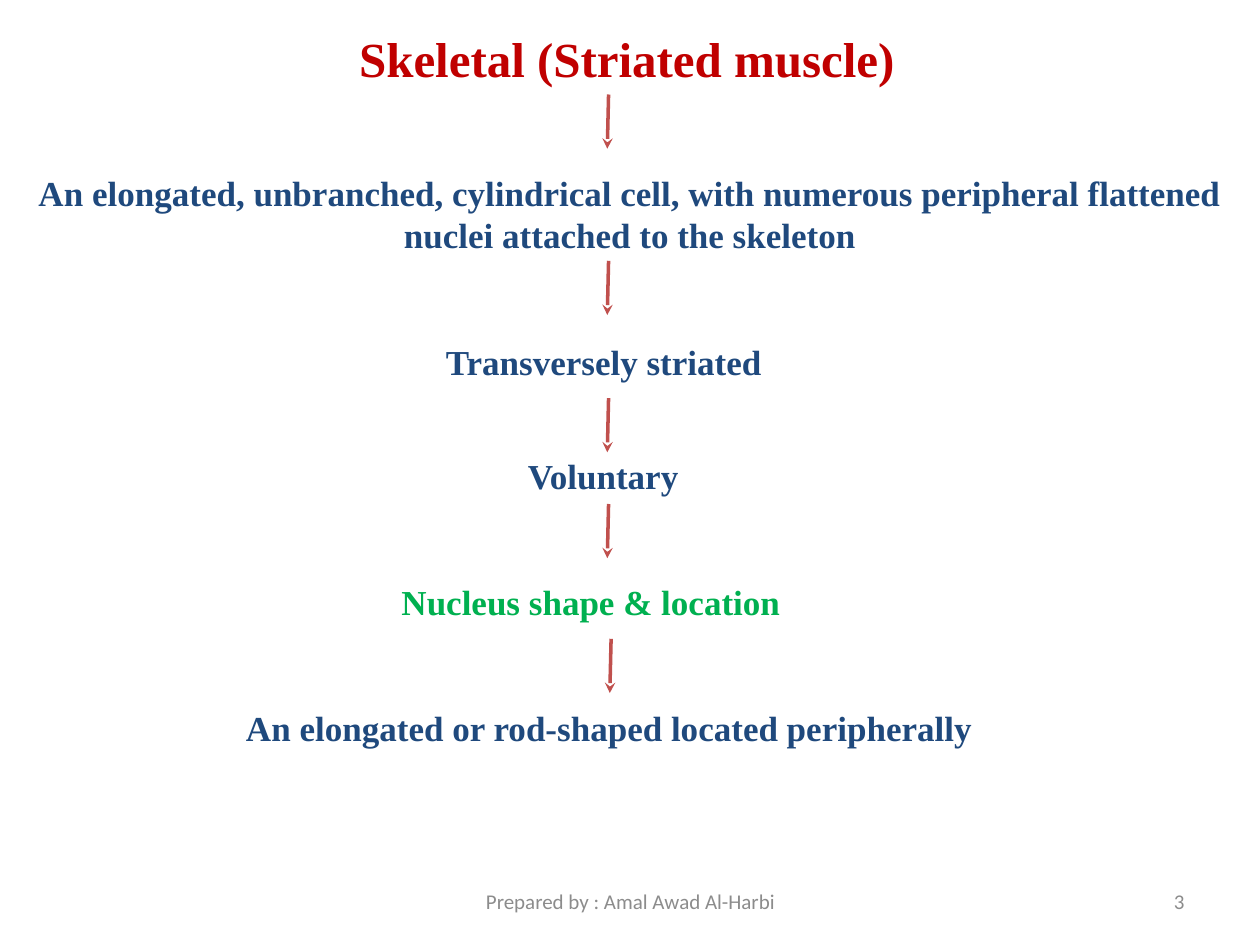
from lxml.etree import SubElement
from pptx import Presentation
from pptx.dml.color import RGBColor
from pptx.enum.shapes import MSO_CONNECTOR as CONNECTOR
from pptx.enum.text import MSO_ANCHOR as ANCHOR, MSO_AUTO_SIZE as AUTO_SIZE, PP_ALIGN as ALIGN
from pptx.oxml.ns import qn
from pptx.util import Inches, Pt

SERIF, SANS = "Times New Roman", "Calibri"
RED, NAVY, GREEN, GREY, ARROW = "C00000", "1F497D", "00B050", "8C8C8C", "C0504D"

# Steps of the chain: text, left, top, width, height, colour, wrap, alignment
STEPS = [
    ("An elongated, unbranched, cylindrical cell, with numerous peripheral "
     "flattened nuclei attached to the skeleton",
     0, 1.31, 10, 0.77, NAVY, True, ALIGN.CENTER),
    ("Transversely striated", 3.44, 2.65, 2.72, 0.44, NAVY, False, ALIGN.LEFT),
    ("Voluntary", 4.09, 3.56, 1.41, 0.44, NAVY, False, ALIGN.LEFT),
    ("Nucleus shape & location", 3.08, 4.56, 3.22, 0.44, GREEN, False, ALIGN.CENTER),
    ("An elongated or rod-shaped located peripherally",
     1.83, 5.56, 6.01, 0.44, NAVY, False, ALIGN.CENTER),
]
# Start of each arrow between the steps
ARROW_STARTS = [(4.83, 0.75), (4.83, 2.07), (4.83, 3.16), (4.83, 4), (4.85, 5.07)]
ARROW_HEIGHT = 0.43


def rgb(value):
    return RGBColor.from_string(value)


def place(sp, left, top, width, height):
    sp.left, sp.top = Inches(left), Inches(top)
    sp.width, sp.height = Inches(width), Inches(height)


def write(sp, text, size, color, font=SERIF, bold=True, align=ALIGN.LEFT,
          wrap=True, grow=True, anchor=ANCHOR.TOP):
    tf = sp.text_frame
    tf.text = text
    tf.word_wrap = wrap
    tf.auto_size = AUTO_SIZE.SHAPE_TO_FIT_TEXT if grow else AUTO_SIZE.NONE
    tf.vertical_anchor = anchor
    p = tf.paragraphs[0]
    p.alignment = align
    f = p.runs[0].font
    f.name, f.size, f.bold = font, Pt(size), bold
    f.color.rgb = rgb(color)


def add_text(s, text, box, size, color, **style):
    sp = s.shapes.add_textbox(*map(Inches, box))
    write(sp, text, size, color, **style)


def add_arrow(s, x, y):
    line = s.shapes.add_connector(CONNECTOR.STRAIGHT, Inches(x), Inches(y),
                                  Inches(x - 0.01), Inches(y + ARROW_HEIGHT))
    line.line.color.rgb = rgb(ARROW)
    line.line.width = Pt(2)
    SubElement(line.line._get_or_add_ln(), qn("a:tailEnd"), type="stealth")
    SubElement(line._element.spPr, qn("a:effectLst"))


def main():
    prs = Presentation()
    prs.slide_width, prs.slide_height = Inches(10), Inches(7.5)
    s = prs.slides.add_slide(prs.slide_layouts[5])

    # Title
    title = s.shapes.title
    place(title, 2.75, 0.18, 4.5, 0.57)
    write(title, "Skeletal (Striated muscle)", 28, RED, wrap=False)

    # Chain of features
    for text, left, top, width, height, color, wrap, align in STEPS:
        add_text(s, text, (left, top, width, height), 20, color, wrap=wrap, align=align)
    for x, y in ARROW_STARTS:
        add_arrow(s, x, y)

    # Footer and slide number
    footer = dict(font=SANS, bold=False, grow=False, anchor=ANCHOR.MIDDLE)
    add_text(s, "Prepared by : Amal Awad Al-Harbi", (3.42, 6.95, 3.17, 0.4), 12, GREY,
             align=ALIGN.CENTER, **footer)
    add_text(s, "3", (7.17, 6.95, 2.33, 0.4), 12, GREY, align=ALIGN.RIGHT, **footer)

    prs.save("out.pptx")


if __name__ == "__main__":
    main()
